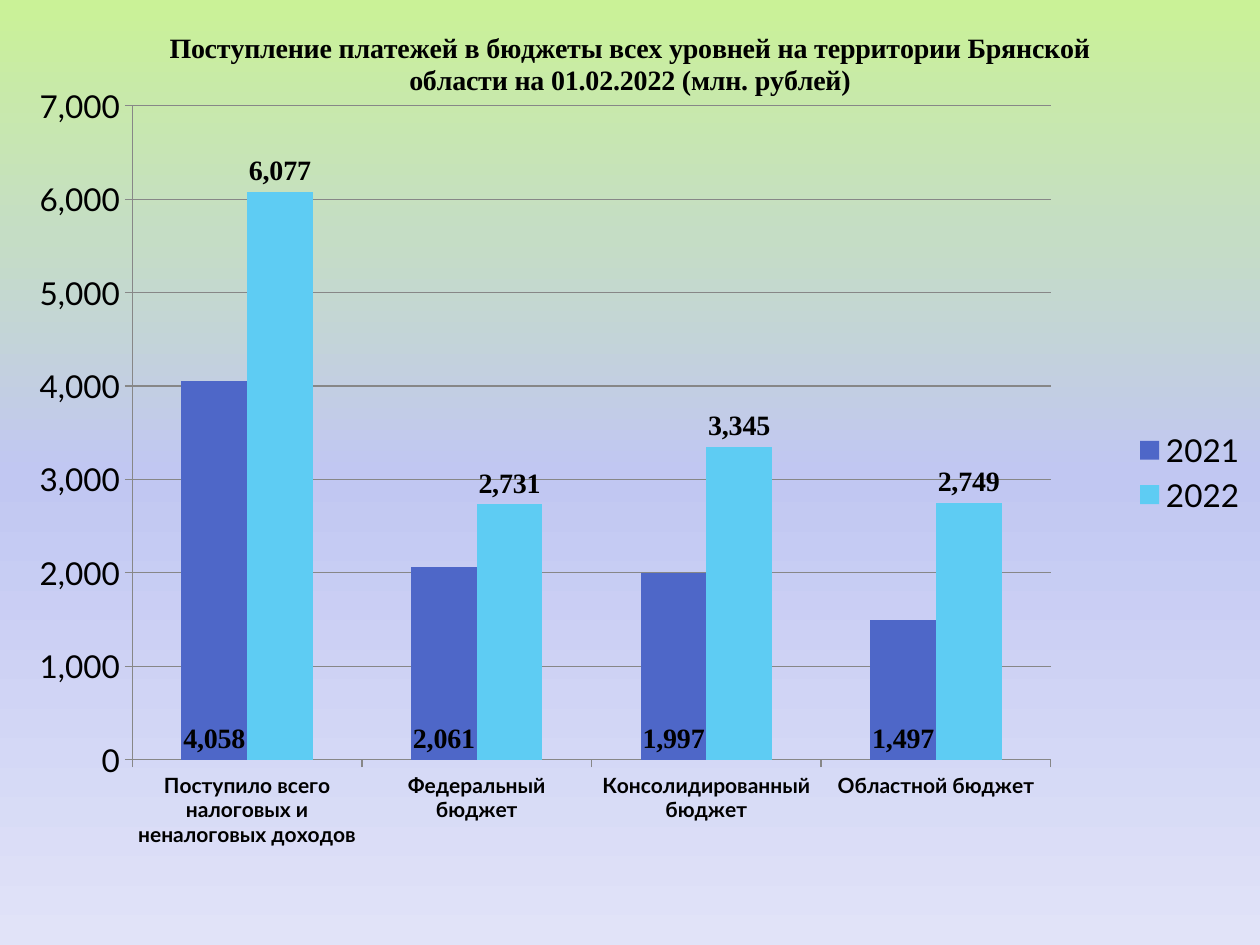
from dataclasses import dataclass

from lxml import etree
from pptx import Presentation
from pptx.chart.data import CategoryChartData
from pptx.dml.color import RGBColor
from pptx.enum.chart import XL_CHART_TYPE, XL_LABEL_POSITION, XL_LEGEND_POSITION, XL_TICK_MARK
from pptx.oxml import parse_xml
from pptx.oxml.ns import nsdecls, qn
from pptx.util import Pt

COLUMNS = XL_CHART_TYPE.COLUMN_CLUSTERED
LEGEND_RIGHT = XL_LEGEND_POSITION.RIGHT
INSIDE_BASE = XL_LABEL_POSITION.INSIDE_BASE
OUTSIDE_END = XL_LABEL_POSITION.OUTSIDE_END
TICK_OUT = XL_TICK_MARK.OUTSIDE

EMU_PER_PX = 914400 / 126
WIDTH, HEIGHT = round(1260 * EMU_PER_PX), round(945 * EMU_PER_PX)
NUMBER_FORMAT = "#,##0"


@dataclass(frozen=True)
class Theme:
    body_font: str = "Lato"
    heading_font: str = "Times New Roman"
    body_size: int = 18
    heading_size: int = 16
    category_size: int = 12
    text: str = "000000"
    grid: str = "878787"
    backdrop: tuple = ((0, "CAF297"), (25, "C5DDC5"), (50, "C1C7F2"), (100, "E1E3F8"))


theme = Theme()

TITLE = ("Поступление платежей в бюджеты всех уровней на территории "
         "Брянской области на 01.02.2022 (млн. рублей)")
BUDGETS = ["Поступило всего налоговых и неналоговых доходов", "Федеральный бюджет",
           "Консолидированный бюджет", "Областной бюджет"]
YEARS = [
    ("2021", (4058, 2061, 1997, 1497), "4E67C8", INSIDE_BASE),
    ("2022", (6077, 2731, 3345, 2749), "5ECCF3", OUTSIDE_END),
]
PLOT_FRACTIONS = {"x": 0.105, "y": 0.112, "w": 0.729, "h": 0.692}


def set_font(font, name, size, bold):
    font.name, font.size, font.bold = name, Pt(size), bold
    font.color.rgb = RGBColor.from_string(theme.text)


prs = Presentation()
prs.slide_width, prs.slide_height = WIDTH, HEIGHT
slide = prs.slides.add_slide(prs.slide_layouts[6])

receipts = CategoryChartData(number_format=NUMBER_FORMAT)
receipts.categories = BUDGETS
for year, amounts, _, _ in YEARS:
    receipts.add_series(year, amounts)
chart = slide.shapes.add_chart(COLUMNS, 0, 0, WIDTH, HEIGHT, receipts).chart
set_font(chart.font, theme.body_font, theme.body_size, False)

# Title and legend
chart.has_title = True
heading = chart.chart_title.text_frame
heading.text = TITLE
set_font(heading.paragraphs[0].font, theme.heading_font, theme.heading_size, True)
chart.chart_title.include_in_layout = False
chart.has_legend = True
chart.legend.position = LEGEND_RIGHT
chart.legend.include_in_layout = False

# Columns and their values
columns = chart.plots[0]
columns.gap_width, columns.overlap = 150, 0
columns.vary_by_categories = False
for series, (_, _, color, position) in zip(columns.series, YEARS):
    series.format.fill.solid()
    series.format.fill.fore_color.rgb = RGBColor.from_string(color)
    labels = series.data_labels
    labels.show_value = True
    labels.position = position
    labels.number_format, labels.number_format_is_linked = NUMBER_FORMAT, False
    set_font(labels.font, theme.heading_font, theme.heading_size, True)

# Axes
amount_axis, budget_axis = chart.value_axis, chart.category_axis
amount_axis.minimum_scale, amount_axis.maximum_scale = 0, 7000
amount_axis.major_unit = 1000
amount_axis.has_major_gridlines = True
amount_axis.tick_labels.number_format = NUMBER_FORMAT
amount_axis.tick_labels.number_format_is_linked = False
set_font(budget_axis.tick_labels.font, theme.body_font, theme.category_size, True)
for axis in (amount_axis, budget_axis):
    axis.major_tick_mark = TICK_OUT
for ruled in (amount_axis, budget_axis, amount_axis.major_gridlines):
    ruled.format.line.color.rgb = RGBColor.from_string(theme.grid)
    ruled.format.line.width = Pt(0.75)

# Fixed inner plot area
plot_area = chart.element.find(qn("c:chart")).find(qn("c:plotArea"))
for automatic in plot_area.findall(qn("c:layout")):
    plot_area.remove(automatic)
layout = etree.Element(qn("c:layout"))
manual = etree.SubElement(layout, qn("c:manualLayout"))
settings = [("layoutTarget", "inner"), ("xMode", "edge"), ("yMode", "edge"),
            *PLOT_FRACTIONS.items()]
for tag, value in settings:
    etree.SubElement(manual, qn(f"c:{tag}"), val=str(value))
plot_area.insert(0, layout)

# Gradient behind the whole chart
stops = "".join(f'<a:gs pos="{percent * 1000}"><a:srgbClr val="{color}"/></a:gs>'
                for percent, color in theme.backdrop)
chart.element.find(qn("c:chart")).addnext(parse_xml(
    f'<c:spPr {nsdecls("c", "a")}><a:gradFill><a:gsLst>{stops}</a:gsLst>'
    '<a:lin ang="5400000" scaled="0"/></a:gradFill><a:ln><a:noFill/></a:ln></c:spPr>'))

prs.save("out.pptx")
